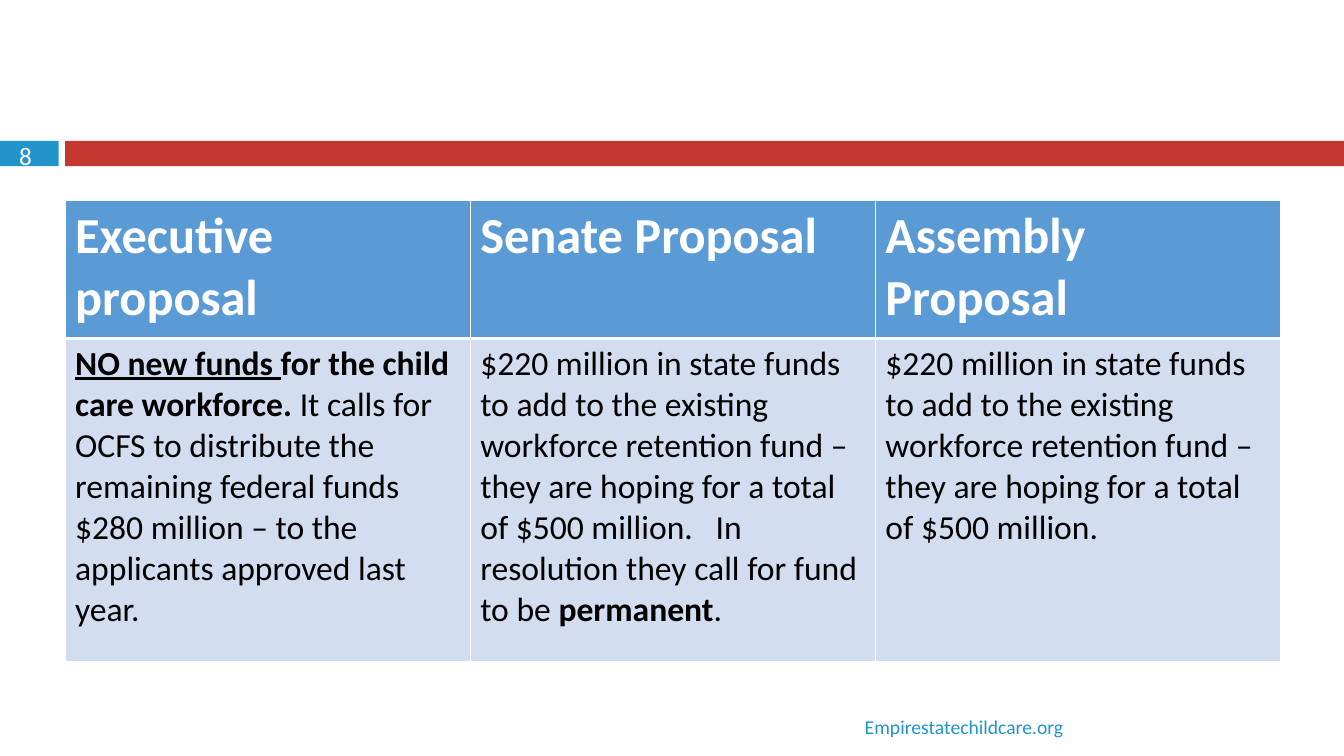
from lxml import etree
from pptx import Presentation
from pptx.dml.color import RGBColor
from pptx.enum.shapes import MSO_SHAPE
from pptx.enum.text import PP_ALIGN
from pptx.oxml.ns import qn
from pptx.util import Cm, Pt

RECT = MSO_SHAPE.RECTANGLE
LEFT, RIGHT = PP_ALIGN.LEFT, PP_ALIGN.RIGHT

FONT = "Calibri"
WHITE, BLACK = "FFFFFF", "000000"
BLUE, RED = "2195CB", "C43730"
HEADER_FILL, BODY_FILL = "5B9BD5", "D2DEEF"


def rgb(value):
    return RGBColor.from_string(value)


def add_border(cell, side, points):
    """Draw one white cell border; side is L, R, T or B."""
    ln = etree.SubElement(cell._tc.get_or_add_tcPr(), qn(f"a:ln{side}"), w=str(Pt(points)))
    fill = etree.SubElement(ln, qn("a:solidFill"))
    etree.SubElement(fill, qn("a:srgbClr"), val=WHITE)


prs = Presentation()
prs.slide_width, prs.slide_height = Cm(33.87), Cm(19.05)
s = prs.slides.add_slide(prs.slide_layouts[6])

# Band across the top
for left, width, color in [(0, 1.48, BLUE), (1.64, 32.23, RED)]:
    sp = s.shapes.add_shape(RECT, Cm(left), Cm(3.55), Cm(width), Cm(0.64))
    sp.shadow.inherit = False
    sp.fill.solid()
    sp.fill.fore_color.rgb = rgb(color)
    sp.line.fill.background()

# Slide number and footer
labels = [
    ("8", 0.1, 3.4, 1.27, 1.02, 18, WHITE, LEFT, 0.38),
    ("Empirestatechildcare.org", 21.39, 17.88, 5.66, 0.86, 14, BLUE, RIGHT, 0.25),
]
for text, left, top, width, height, size, color, align, inset in labels:
    sp = s.shapes.add_textbox(Cm(left), Cm(top), Cm(width), Cm(height))
    tf = sp.text_frame
    tf.word_wrap = True
    tf.margin_left = Cm(inset)
    tf.text = text
    p = tf.paragraphs[0]
    p.alignment = align
    p.font.name, p.font.size = FONT, Pt(size)
    p.font.color.rgb = rgb(color)

# Proposal table: each cell is a list of (text, bold, underline) runs
shared_funds = (
    "$220 million in state funds to add to the existing workforce retention fund – "
    "they are hoping for a total of $500 million."
)
rows = [
    [
        [("Executive proposal", True, False)],
        [("Senate Proposal", True, False)],
        [("Assembly Proposal", True, False)],
    ],
    [
        [
            ("NO new funds ", True, True),
            ("for the child care workforce. ", True, False),
            ("It calls for OCFS to distribute the remaining federal funds "
             "$280 million – to the applicants approved last year.", False, False),
        ],
        [
            (shared_funds + "   In resolution they call for fund to be ", False, False),
            ("permanent", True, False),
            (".", False, False),
        ],
        [(shared_funds, False, False)],
    ],
]
row_styles = [
    (3.47, 36, WHITE, HEADER_FILL, {"L": 1, "R": 1, "T": 1, "B": 3}),
    (8.13, 24, BLACK, BODY_FILL, {"L": 1, "R": 1, "T": 3, "B": 1}),
]

table = s.shapes.add_table(2, 3, Cm(1.64), Cm(5.06), Cm(30.63), Cm(11.6)).table
for column in table.columns:
    column.width = Cm(10.21)
for i, (height, size, color, fill, borders) in enumerate(row_styles):
    table.rows[i].height = Cm(height)
    for cell, runs in zip(table.rows[i].cells, rows[i]):
        for side, points in borders.items():
            add_border(cell, side, points)
        cell.fill.solid()
        cell.fill.fore_color.rgb = rgb(fill)
        p = cell.text_frame.paragraphs[0]
        for text, bold, underline in runs:
            r = p.add_run()
            r.text = text
            r.font.name, r.font.size = FONT, Pt(size)
            r.font.bold, r.font.underline = bold, underline
            r.font.color.rgb = rgb(color)

prs.save("out.pptx")
